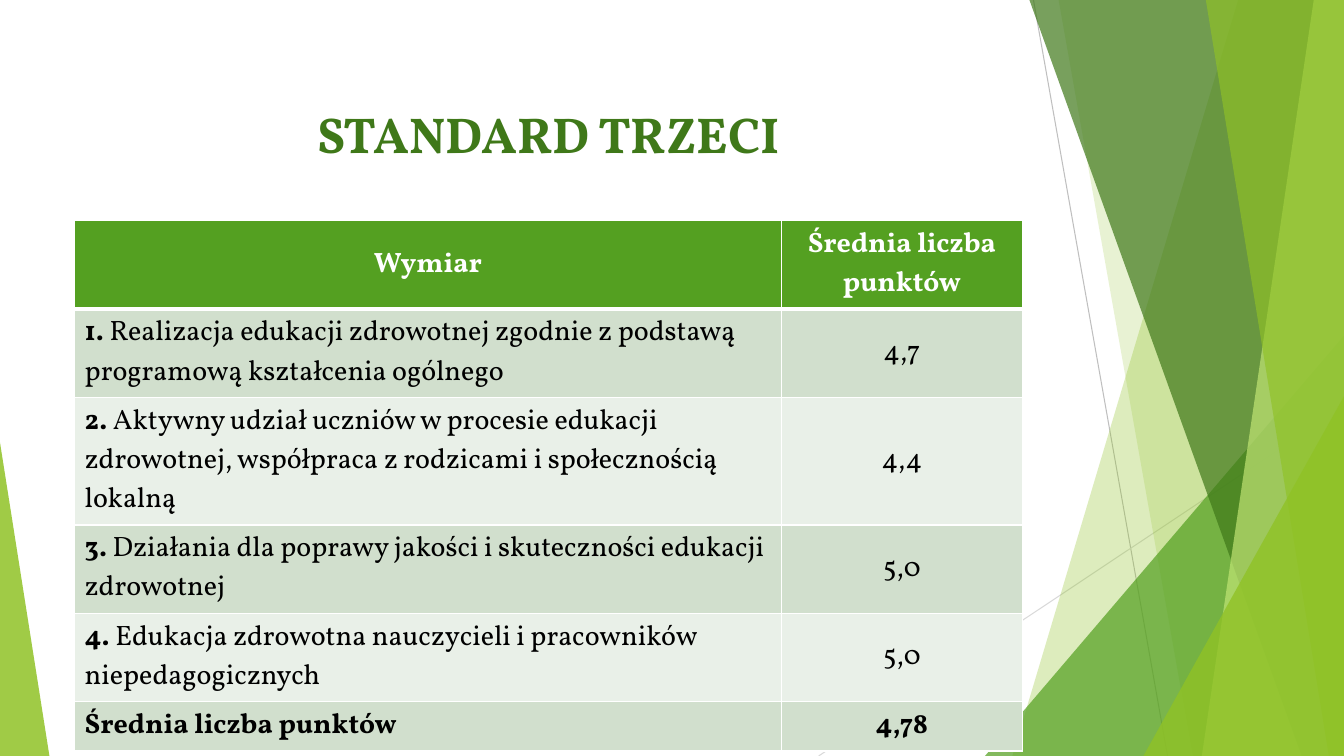
import pptx
import pptx.chart.data
import pptx.dml.color
import pptx.enum.shapes
import pptx.enum.text
import pptx.oxml
import pptx.oxml.ns
import pptx.util

Inches = pptx.util.Inches
Pt = pptx.util.Pt
qn = pptx.oxml.ns.qn
ALIGN = pptx.enum.text.PP_ALIGN
ANCHOR = pptx.enum.text.MSO_ANCHOR
FONT = "Vollkorn"
WIDTH, HEIGHT = 13.33, 7.5
COLORS = {
    "white": "FFFFFF", "black": "000000", "dark": "3F7819",
    "green": "54A021", "lime": "90C226", "pale": "C0E474",
    "odd": "D1DFCD", "even": "E9F0E8", "gray": "BFBFBF", "light": "D9D9D9",
}
ROWS = [
    ("", "Wymiar", "Średnia liczba punktów"),
    ("1. ", "Realizacja edukacji zdrowotnej zgodnie z podstawą programową kształcenia ogólnego", "4,7"),
    ("2. ", "Aktywny udział uczniów w procesie edukacji zdrowotnej, współpraca z rodzicami i społecznością lokalną", "4,4"),
    ("3. ", "Działania dla poprawy jakości i skuteczności edukacji zdrowotnej", "5,0"),
    ("4. ", "Edukacja zdrowotna nauczycieli i pracowników niepedagogicznych", "5,0"),
    ("", "Średnia liczba punktów", "4,78"),
]


def rgb(name):
    return pptx.dml.color.RGBColor.from_string(COLORS[name])


def paint(shape, color, alpha):
    shape.shadow.inherit = False
    shape.line.fill.background()
    shape.fill.solid()
    shape.fill.fore_color.rgb = rgb(color)
    tint = shape.fill._xPr.find(qn("a:solidFill"))[0]
    pptx.oxml.xmlchemy.OxmlElement
    node = tint.makeelement(qn("a:alpha"), {"val": str(alpha * 1000)})
    tint.append(node)


def add_line(slide, start, end, color):
    kind = pptx.enum.shapes.MSO_CONNECTOR.STRAIGHT
    line = slide.shapes.add_connector(kind, *map(Inches, start + end))
    line.line.color.rgb = rgb(color)
    line.line.width = Pt(0.75)
    props = line._element.spPr
    props.append(props.makeelement(qn("a:effectLst"), {}))


def add_band(slide, top, base, color, alpha):
    pen = slide.shapes.build_freeform(Inches(top), 0, scale=1.0)
    spots = [(WIDTH, 0), (WIDTH, HEIGHT), (base, HEIGHT)]
    pen.add_line_segments([(Inches(x), Inches(y)) for x, y in spots])
    paint(pen.convert_to_shape(), color, alpha)


def add_wedge(slide, left, top, width, apex, color, alpha):
    kind = pptx.enum.shapes.MSO_SHAPE.ISOSCELES_TRIANGLE
    wedge = slide.shapes.add_shape(
        kind, Inches(left), Inches(top), Inches(width), Inches(HEIGHT - top))
    wedge.adjustments[0] = apex
    paint(wedge, color, alpha)


def style(run, size, color, bold):
    run.font.name = FONT
    run.font.size = Pt(size)
    run.font.bold = bold
    run.font.color.rgb = rgb(color)


def add_title(slide, text):
    title = slide.shapes.title
    title.left, title.top = Inches(0.74), Inches(0.97)
    title.width, title.height = Inches(9.4), Inches(1.22)
    title.text_frame.text = text
    title.text_frame.vertical_anchor = ANCHOR.TOP
    para = title.text_frame.paragraphs[0]
    para.alignment = ALIGN.CENTER
    style(para.runs[0], 36, "dark", True)


def add_edges(cell, top, base):
    props = cell._tc.get_or_add_tcPr()
    for side, width in zip("LRTB", (1, 1, top, base)):
        edge = props.makeelement(qn("a:ln" + side), {"w": str(Pt(width))})
        fill = edge.makeelement(qn("a:solidFill"), {})
        fill.append(fill.makeelement(qn("a:srgbClr"), {"val": COLORS["white"]}))
        edge.append(fill)
        props.append(edge)


def fill_cell(cell, parts, row, middle):
    head = row == 0
    add_edges(cell, 3 if row == 1 else 1, 3 if head else 1)
    cell.fill.solid()
    cell.fill.fore_color.rgb = rgb("green" if head else "odd" if row % 2 else "even")
    para = cell.text_frame.paragraphs[0]
    if middle:
        cell.vertical_anchor = ANCHOR.MIDDLE
        para.alignment = ALIGN.CENTER
    for text, bold in parts:
        run = para.add_run()
        run.text = text
        style(run, 20, "white" if head else "black", bold)


def add_grid(slide, rows):
    size = 0.41
    frame = slide.shapes.add_table(
        len(rows), 2, Inches(0.74), Inches(2.19), Inches(9.4), Inches(size * len(rows)))
    table = frame.table
    for col, width in zip(table.columns, (7.01, 2.39)):
        col.width = Inches(width)
    for row, (mark, label, score) in enumerate(rows):
        table.rows[row].height = Inches(size)
        bold = not mark
        parts = [(mark, True)] if mark else []
        fill_cell(table.cell(row, 0), parts + [(label, bold)], row, row == 0)
        fill_cell(table.cell(row, 1), [(score, bold)], row, True)


def add_decor(slide):
    add_line(slide, (10.25, 0), (11.58, HEIGHT), "gray")
    add_line(slide, (WIDTH, 4.03), (8.12, HEIGHT), "light")
    add_band(slide, 12.28, 10.04, "lime", 30)
    add_band(slide, 10.5, 11.83, "lime", 20)
    add_wedge(slide, 9.77, 3.33, 3.56, 1, "green", 72)
    add_band(slide, 10.21, 12.91, "dark", 70)
    add_band(slide, 13.03, 11.92, "pale", 70)
    add_band(slide, 11.96, 13.18, "lime", 65)
    add_wedge(slide, 11.34, 3.93, 1.99, 1, "lime", 80)
    add_wedge(slide, 0, 4.39, 0.49, 0, "lime", 85)


def main():
    deck = pptx.Presentation()
    deck.slide_width, deck.slide_height = Inches(WIDTH), Inches(HEIGHT)
    slide = deck.slides.add_slide(deck.slide_layouts[5])
    add_decor(slide)
    add_title(slide, "STANDARD TRZECI")
    add_grid(slide, ROWS)
    deck.save("out.pptx")


if __name__ == "__main__":
    main()
